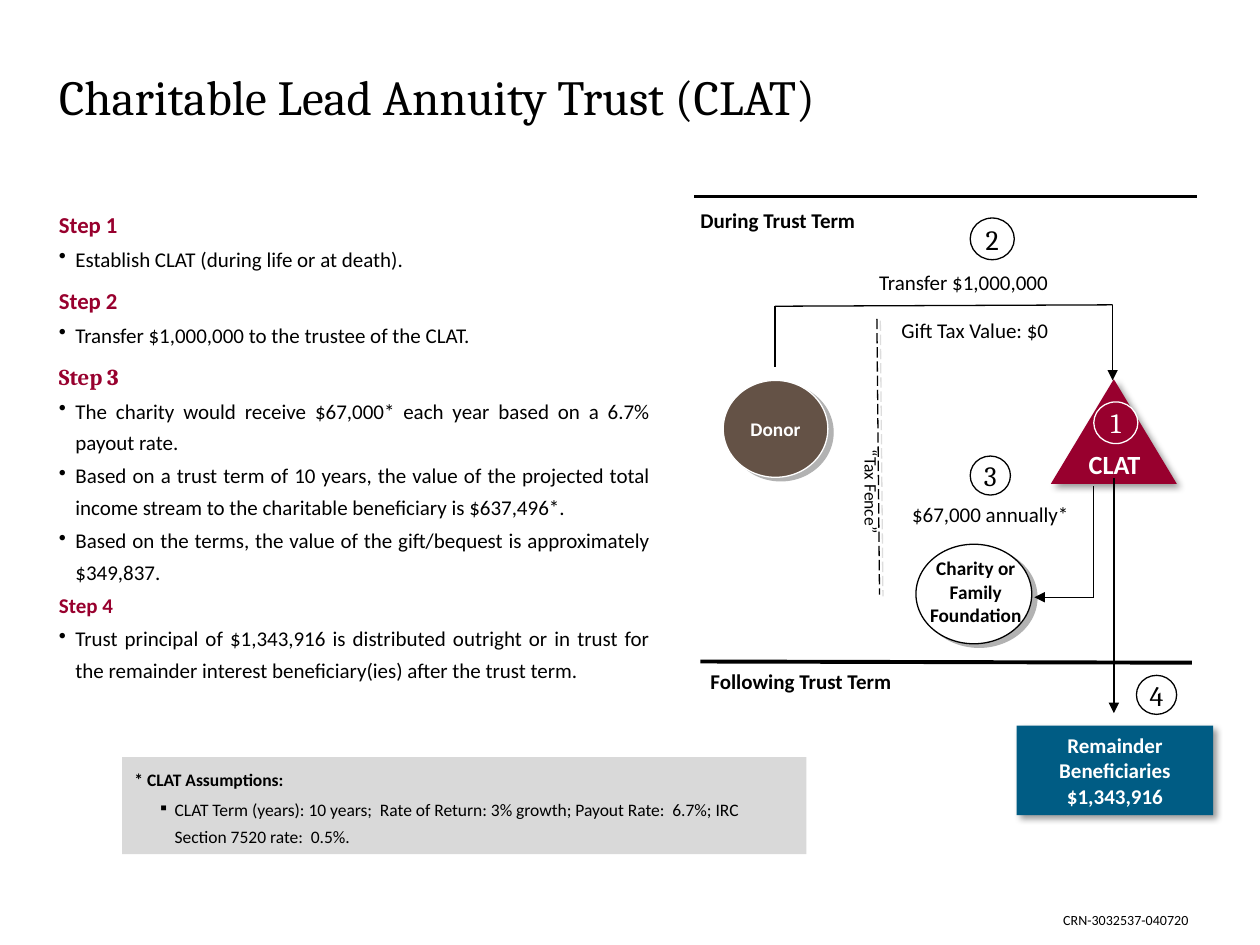
from lxml import etree
from pptx import Presentation, util as u
from pptx.dml.color import RGBColor
from pptx.enum import dml, shapes, text
from pptx.oxml.ns import qn

Pt = u.Pt
C = dict(black="000000", white="FFFFFF", maroon="98002E", brown="645246", blue="005C84",
         gray="D9D9D9", shade="B2B2B2", pale="DDDDDD")
AL = text.PP_ALIGN
MIDDLE = text.MSO_ANCHOR.MIDDLE
OVAL = shapes.MSO_SHAPE.OVAL
TRIANGLE = shapes.MSO_SHAPE.ISOSCELES_TRIANGLE
RECT = shapes.MSO_SHAPE.RECTANGLE

# Content; boxes are left, top, width, height in points
TITLE = "Charitable Lead Annuity Trust (CLAT)"
# heading, heading format, bullets
STEPS = [
    ("Step 1", dict(before=2), ["Establish CLAT (during life or at death)."]),
    ("Step 2", dict(before=5), ["Transfer $1,000,000 to the trustee of the CLAT."]),
    ("Step 3", dict(before=5, font="Cambria"), [
        "The charity would receive $67,000* each year based on a 6.7% payout rate.",
        "Based on a trust term of 10 years, the value of the projected total income stream "
        "to the charitable beneficiary is $637,496*.",
        "Based on the terms, the value of the gift/bequest is approximately $349,837."]),
    ("Step 4", dict(before=1, size=12), [
        "Trust principal of $1,343,916 is distributed outright or in trust for the "
        "remainder interest beneficiary(ies) after the trust term."]),
]
ASSUMPTIONS = ("* CLAT Assumptions:",
               "CLAT Term (years): 10 years;  Rate of Return: 3% growth; Payout Rate:  6.7%; "
               "IRC Section 7520 rate:  0.5%.")
# colour, opacity, blur, distance, angle
ROUND_SHADOW = (C["shade"], 100, 0, 3.6, 34)
SOFT_SHADOW = (C["black"], 40, 4, 3, 45)
FENCE_SHADOW = (C["pale"], 100, 0, 2.2, 27)
# preset, box, fill, line, shadow, text, text size
PARTIES = [
    (OVAL, (413.3, 217.4, 59.8, 55.4), "brown", "white", ROUND_SHADOW, "Donor", 11),
    (TRIANGLE, (600.5, 216.7, 72, 59.8), "maroon", None, SOFT_SHADOW, "", 11),
    (OVAL, (523.4, 311, 66.2, 56.9), "white", "black", ROUND_SHADOW, "", 11),
    (RECT, (581, 414.7, 112.3, 51.1), "blue", None, SOFT_SHADOW,
     "Remainder Beneficiaries $1,343,916", 12),
]
# text, box, format
LABELS = [
    ("CLAT", (589, 252.7, 95.8, 25.2), dict(size=15, color="white", bold=True, align=AL.CENTER)),
    ("Charity or Family Foundation", (519.8, 314.6, 75.6, 47.5),
     dict(size=11, bold=True, align=AL.CENTER)),
    ("Transfer $1,000,000", (478.6, 150.5, 144, 21.6), dict(align=AL.CENTER)),
    ("Gift Tax Value: $0", (485.1, 177.8, 144, 21.6), dict(align=AL.CENTER)),
    ("$67,000 annually*", (504, 283, 123.8, 21.6), dict(align=AL.CENTER)),
    ("During Trust Term", (393.1, 115.2, 202.3, 21.6), dict(bold=True)),
    ("Following Trust Term", (398.9, 378.7, 183.6, 21.6), dict(bold=True)),
    ("CRN-3032537-040720", (600.5, 518.4, 115.2, 15.8), dict(size=8, spacing=0.9)),
]
FENCE_LABEL = ("“Tax Fence”", (481, 249.8, 26.6, 63.4))
# number, box, colour
MARKERS = [
    ("1", (625, 229.7, 25.2, 23.8), "white"),
    ("2", (554.4, 124.6, 25.2, 23.8), "black"),
    ("3", (554.4, 260.6, 23, 22.3), "black"),
    ("4", (649.4, 385.9, 23, 22.3), "black"),
]
# (x1, y1, x2, y2), options
LINES = [
    ((396.7, 112.3, 684, 112.3), dict(width=2.25)),
    ((400.3, 378, 681.1, 378.7), dict(width=2.25)),
    ((501.1, 182.2, 502.6, 339.8), dict(dashed=True, shadow=FENCE_SHADOW)),
    ((442.8, 175, 442.8, 209.5), {}),
    ((442.8, 175, 635.8, 174.2), {}),
    ((635.8, 174.2, 635.8, 217.4), dict(arrow=True)),
    ((625, 277.9, 625, 341.3), {}),
    ((625, 341.3, 591.1, 341.3), dict(arrow=True)),
    ((636.5, 272.9, 636.5, 407.5), dict(arrow=True)),
]


def rgb(name):
    return RGBColor.from_string(C[name])


def add_shadow(sp, shadow=None):
    lst = etree.SubElement(sp._element.spPr, qn("a:effectLst"))
    if shadow:
        color, alpha, blur, dist, angle = shadow
        outer = etree.SubElement(lst, qn("a:outerShdw"), blurRad=str(Pt(blur)),
                                 dist=str(Pt(dist)), dir=str(angle * 60000), rotWithShape="0")
        clr = etree.SubElement(outer, qn("a:srgbClr"), val=color)
        etree.SubElement(clr, qn("a:alpha"), val=str(alpha * 1000))


def write(tf, txt, size=12, color="black", bold=False, font="Calibri", align=AL.LEFT,
          spacing=None, before=0, bullet=None, indent=0, bullet_size=None):
    """Add one formatted paragraph, using the empty first one if there is one."""
    p = tf.paragraphs[0] if not tf.text else tf.add_paragraph()
    p.alignment, p.space_before = align, Pt(before)
    if spacing:
        p.line_spacing = spacing
    r = p.add_run()
    r.text = txt
    r.font.size, r.font.bold, r.font.name = Pt(size), bold, font
    r.font.color.rgb = rgb(color)
    if bullet:
        pPr = p._p.get_or_add_pPr()
        pPr.set("marL", str(Pt(indent)))
        pPr.set("indent", str(-Pt(9.4)))
        if bullet_size:
            etree.SubElement(pPr, qn("a:buSzPct"), val=str(bullet_size * 1000))
        etree.SubElement(pPr, qn("a:buChar"), char=bullet)


def add_text(s, box):
    tf = s.shapes.add_textbox(*map(Pt, box)).text_frame
    tf.word_wrap = True
    return tf


def add_shape(s, kind, box, fill=None, line=None, shadow=None):
    sp = s.shapes.add_shape(kind, *map(Pt, box))
    if fill:
        sp.fill.solid()
        sp.fill.fore_color.rgb = rgb(fill)
    else:
        sp.fill.background()
    if line:
        sp.line.color.rgb, sp.line.width = rgb(line), Pt(0.75)
    else:
        sp.line.fill.background()
    add_shadow(sp, shadow)
    return sp


def add_line(s, ends, width=0.75, dashed=False, arrow=False, shadow=None):
    ln = s.shapes.add_connector(shapes.MSO_CONNECTOR.STRAIGHT, *map(Pt, ends))
    ln.line.color.rgb, ln.line.width = rgb("black"), Pt(width)
    if dashed:
        ln.line.dash_style = dml.MSO_LINE.LONG_DASH
    if arrow:
        etree.SubElement(ln._element.spPr.find(qn("a:ln")), qn("a:tailEnd"), type="triangle")
    add_shadow(ln, shadow)


def set_insets(tf, inset):
    tf.margin_left = tf.margin_right = tf.margin_top = tf.margin_bottom = Pt(inset)


def main():
    prs = Presentation()
    prs.slide_width, prs.slide_height = Pt(720), Pt(540)
    s = prs.slides.add_slide(prs.slide_layouts[5])

    # Title
    t = s.shapes.title
    t.left, t.top, t.width, t.height = map(Pt, (33.8, 38.2, 651.6, 41))
    tf = t.text_frame
    set_insets(tf, 0)
    tf.vertical_anchor, tf.auto_size = text.MSO_ANCHOR.TOP, text.MSO_AUTO_SIZE.NONE
    write(tf, TITLE, size=28, font="Cambria")

    # Steps
    tf = add_text(s, (26.6, 113, 352.1, 302.4))
    body = dict(align=AL.JUSTIFY, spacing=1.25)
    for heading, fmt, bullets in STEPS:
        write(tf, heading, **{"size": 13, "color": "maroon", "bold": True, **body, **fmt})
        for item in bullets:
            write(tf, item, before=1, bullet="•", indent=9.4, **body)

    # Diagram
    for kind, box, fill, line, shadow, txt, size in PARTIES:
        sp = add_shape(s, kind, box, fill, line, shadow)
        if txt:
            sp.text_frame.word_wrap = True
            sp.text_frame.vertical_anchor = MIDDLE
            set_insets(sp.text_frame, 4)
            write(sp.text_frame, txt, size=size, color="white", bold=True, align=AL.CENTER)
    for txt, box, fmt in LABELS:
        write(add_text(s, box), txt, **fmt)
    tf = add_text(s, FENCE_LABEL[1])
    tf._txBody.bodyPr.set("vert", "eaVert")
    write(tf, FENCE_LABEL[0], size=10, align=AL.CENTER)
    for ends, options in LINES:
        add_line(s, ends, **options)
    for number, box, color in MARKERS:
        tf = add_shape(s, OVAL, box, line=color).text_frame
        set_insets(tf, 0)
        tf.word_wrap, tf.vertical_anchor = False, MIDDLE
        write(tf, number, size=16, color=color, font="Cambria", align=AL.CENTER)

    # Assumptions
    tf = add_shape(s, RECT, (69.8, 432.7, 391, 55.4), "gray").text_frame
    tf.word_wrap, tf.vertical_anchor = True, text.MSO_ANCHOR.TOP
    write(tf, ASSUMPTIONS[0], size=10, bold=True, spacing=1.25)
    write(tf, ASSUMPTIONS[1], size=10, spacing=1.25, before=2.5, bullet="▪", indent=23,
          bullet_size=85)

    prs.save("out.pptx")


if __name__ == "__main__":
    main()
